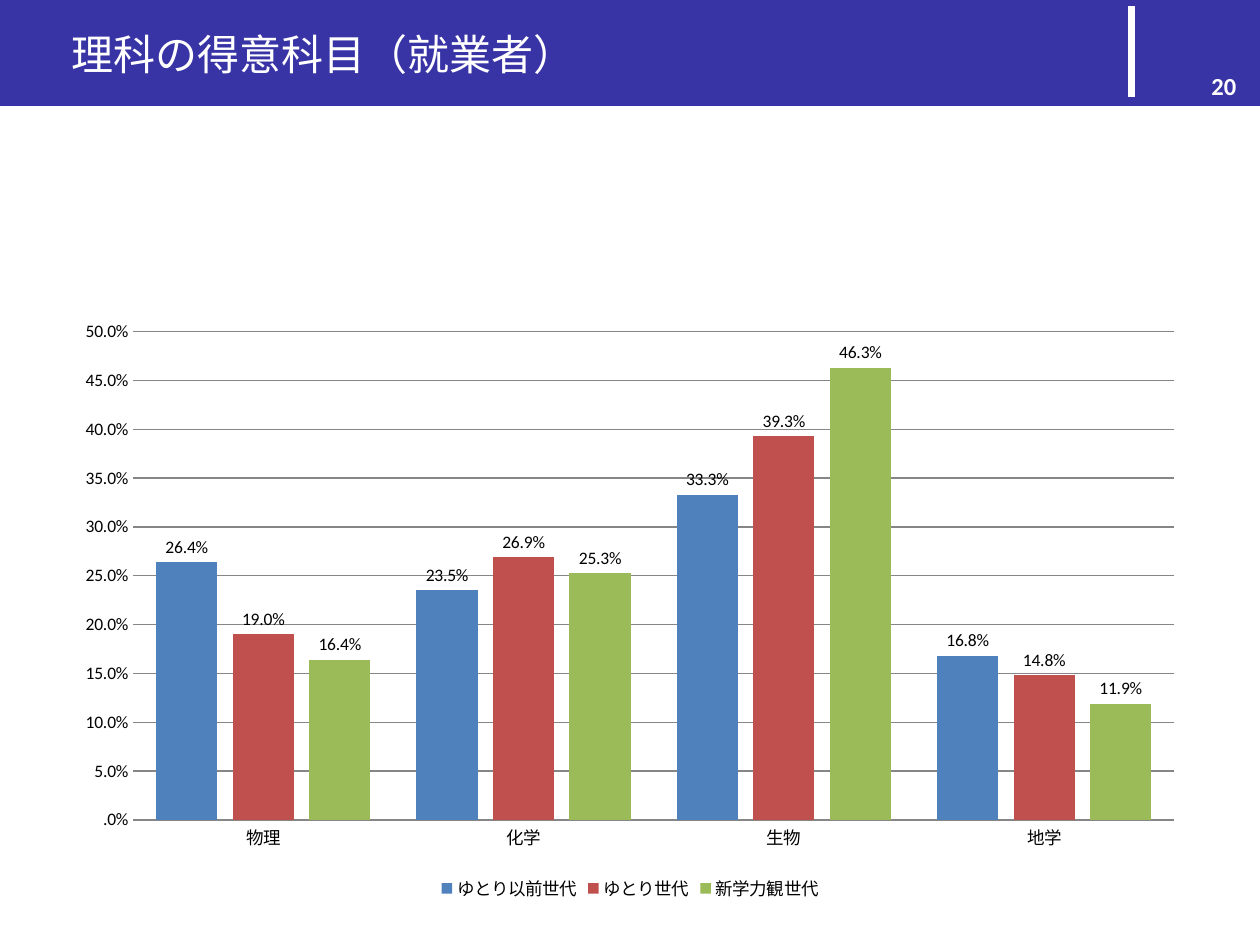
from lxml import etree
from pptx import Presentation
from pptx.chart.data import CategoryChartData
from pptx.dml.color import RGBColor
from pptx.enum.chart import XL_CHART_TYPE, XL_LABEL_POSITION, XL_LEGEND_POSITION, XL_TICK_MARK
from pptx.enum.shapes import MSO_CONNECTOR, MSO_SHAPE
from pptx.enum.text import MSO_ANCHOR, PP_ALIGN
from pptx.oxml.ns import qn
from pptx.util import Inches, Pt

RECT = MSO_SHAPE.RECTANGLE
LINE = MSO_CONNECTOR.STRAIGHT
MIDDLE = MSO_ANCHOR.MIDDLE
LEFT, RIGHT = PP_ALIGN.LEFT, PP_ALIGN.RIGHT
COLUMN = XL_CHART_TYPE.COLUMN_CLUSTERED
BOTTOM = XL_LEGEND_POSITION.BOTTOM
ABOVE = XL_LABEL_POSITION.OUTSIDE_END
NO_TICK = XL_TICK_MARK.NONE

NAVY, WHITE, BLACK, GRAY = "3934A6", "FFFFFF", "000000", "868686"
PERCENT = "####.0%"
SUBJECTS = ["物理", "化学", "生物", "地学"]
GROUPS = [
    ("ゆとり以前世代", "4F81BD", [0.264, 0.235, 0.333, 0.168]),
    ("ゆとり世代", "C0504D", [0.19, 0.269, 0.393, 0.148]),
    ("新学力観世代", "9BBB59", [0.164, 0.253, 0.463, 0.119]),
]


def color(value):
    return RGBColor.from_string(value)


class Deck:
    face = "Calibri"

    def __init__(self, wide, high):
        self.show = Presentation()
        self.show.slide_width = Inches(wide)
        self.show.slide_height = Inches(high)
        self.slide = self.show.slides.add_slide(self.show.slide_layouts[6])

    def font(self, font, size, tint, bold=False):
        font.name = self.face
        font.size = Pt(size)
        font.bold = bold
        font.color.rgb = color(tint)

    def rect(self, box, tint):
        shape = self.slide.shapes.add_shape(RECT, *map(Inches, box))
        shape.shadow.inherit = False
        shape.fill.solid()
        shape.fill.fore_color.rgb = color(tint)
        shape.line.fill.background()

    def line(self, ends, tint, width):
        line = self.slide.shapes.add_connector(LINE, *map(Inches, ends))
        line.line.color.rgb = color(tint)
        line.line.width = Pt(width)
        etree.SubElement(line._element.spPr, qn("a:effectLst"))

    def text(self, box, runs, size, tint, align=LEFT, bold=False):
        frame = self.slide.shapes.add_textbox(*map(Inches, box)).text_frame
        frame.word_wrap = True
        frame.vertical_anchor = MIDDLE
        para = frame.paragraphs[0]
        para.alignment = align
        for words in runs:
            run = para.add_run()
            run.text = words
            self.font(run.font, size, tint, bold)

    def chart(self, box, names, groups, size):
        data = CategoryChartData(number_format=PERCENT)
        data.categories = names
        for name, tint, values in groups:
            data.add_series(name, values)
        chart = self.slide.shapes.add_chart(COLUMN, *map(Inches, box), data).chart
        self.font(chart.font, size, BLACK)
        chart.has_title = False
        chart.has_legend = True
        chart.legend.position = BOTTOM
        chart.legend.include_in_layout = False
        self.axes(chart)
        plot = chart.plots[0]
        plot.vary_by_categories = False
        plot.gap_width = 75
        plot.overlap = -25
        for part, (name, tint, values) in zip(plot.series, groups):
            part.format.fill.solid()
            part.format.fill.fore_color.rgb = color(tint)
            part.invert_if_negative = False
            labels = part.data_labels
            labels.show_value = True
            labels.position = ABOVE
            labels.number_format = PERCENT
            labels.number_format_is_linked = False
            self.font(labels.font, size, BLACK)

    def axes(self, chart):
        for axis in (chart.category_axis, chart.value_axis):
            axis.major_tick_mark = NO_TICK
            axis.minor_tick_mark = NO_TICK
        chart.category_axis.format.line.color.rgb = color(GRAY)
        scale = chart.value_axis
        scale.minimum_scale = 0
        scale.maximum_scale = 0.5
        scale.major_unit = 0.05
        scale.format.line.fill.background()
        scale.has_major_gridlines = True
        scale.major_gridlines.format.line.color.rgb = color(GRAY)
        scale.tick_labels.number_format = PERCENT
        scale.tick_labels.number_format_is_linked = False


def main():
    deck = Deck(10, 7.5)
    for left, width in ((0, 7.84), (7.84, 2.16)):
        deck.rect((left, 0, width, 0.84), NAVY)
    deck.line((8.98, 0.05, 8.98, 0.77), WHITE, 3.5)
    deck.text((0.47, 0.08, 8.13, 0.7), ["理科の得意科目（就業者）"], 24, WHITE)
    deck.text((7.58, 0.42, 2.33, 0.52), ["20"], 14, WHITE, RIGHT, True)
    deck.chart((0.5, 2.46, 9, 4.73), SUBJECTS, GROUPS, 10)
    deck.show.save("out.pptx")


if __name__ == "__main__":
    main()
